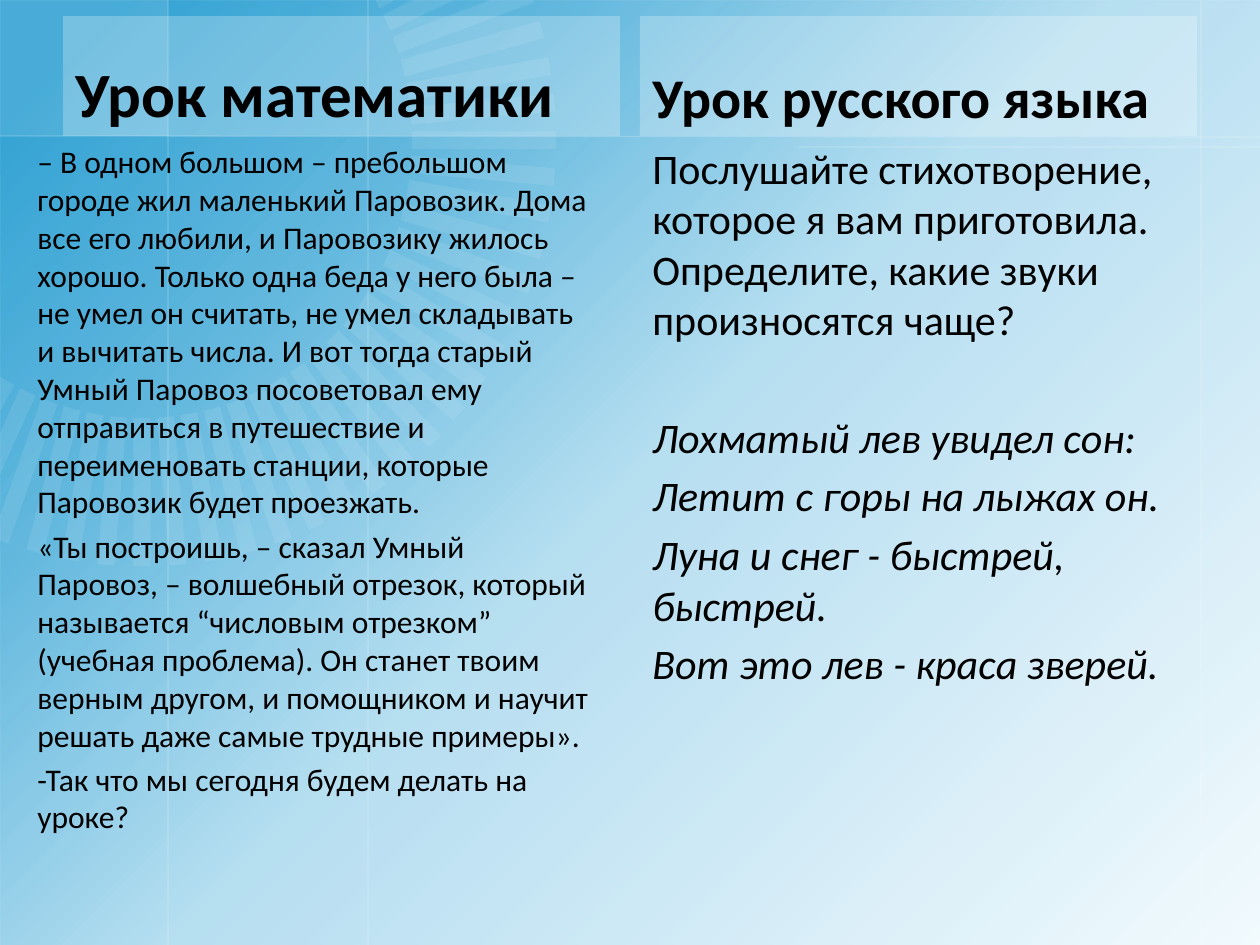
import math
from dataclasses import dataclass

from lxml import etree
from pptx import Presentation
from pptx import util as u
from pptx.dml.color import RGBColor
from pptx.enum import shapes, text
from pptx.oxml import parse_xml
from pptx.oxml.ns import nsdecls, qn

PX = 914400 / 126
WIDTH, HEIGHT = 1260, 945


@dataclass(frozen=True)
class Theme:
    font: str = "Calibri"
    ink: str = "000000"
    white: str = "FFFFFF"
    paper: str = "F4FBFE"
    blue: str = "0F92CC"
    ray: str = "F2FAFE"
    math_heading: int = 36
    russian_heading: int = 32
    math_body: int = 18
    russian_body: int = 24


THEME = Theme()

STORY = [
    "– В одном большом – пребольшом городе жил маленький Паровозик. Дома все его "
    "любили, и Паровозику жилось хорошо. Только одна беда у него была – не умел он "
    "считать, не умел складывать и вычитать числа. И вот тогда старый Умный Паровоз "
    "посоветовал ему отправиться в путешествие и переименовать станции, которые "
    "Паровозик будет проезжать.",
    "«Ты построишь, – сказал Умный Паровоз, – волшебный отрезок, который называется "
    "“числовым отрезком” (учебная проблема). Он станет твоим верным другом, и "
    "помощником и научит решать даже самые трудные примеры».",
    "-Так что мы сегодня будем делать на уроке?",
]
TASK = ("Послушайте стихотворение, которое я вам приготовила. "
        "Определите, какие звуки произносятся чаще?")
POEM = [
    "Лохматый лев увидел сон:",
    "Летит с горы на лыжах он.",
    "Луна и снег - быстрей, быстрей.",
    "Вот это лев - краса зверей.",
]


def emu(*lengths):
    return [u.Emu(round(length * PX)) for length in lengths]


def set_alpha(shape, percent):
    for color in shape.element.spPr.iter(qn("a:srgbClr")):
        etree.SubElement(color, qn("a:alpha"), val=str(percent * 1000))


def fill_clear(shape, color, percent):
    """Give a shape a see-through fill and no outline."""
    shape.fill.solid()
    shape.fill.fore_color.rgb = RGBColor.from_string(color)
    shape.line.fill.background()
    set_alpha(shape, percent)


def add_rectangle(page, *frame):
    box = page.shapes.add_shape(shapes.MSO_SHAPE.RECTANGLE, *emu(*frame))
    box.shadow.inherit = False
    box.line.fill.background()
    return box


def add_gradient(page, stops):
    box = add_rectangle(page, 0, 0, WIDTH, HEIGHT)
    box.fill.background()
    marks = "".join(
        f'<a:gs pos="{place * 1000}"><a:srgbClr val="{THEME.blue}">'
        f'<a:alpha val="{alpha * 1000}"/></a:srgbClr></a:gs>'
        for place, alpha in stops)
    gradient = parse_xml(
        f'<a:gradFill {nsdecls("a")} rotWithShape="1"><a:gsLst>{marks}</a:gsLst>'
        '<a:lin ang="2700000" scaled="0"/></a:gradFill>')
    properties = box.element.spPr
    properties.replace(properties.find(qn("a:noFill")), gradient)


def add_guide(page, *ends):
    guide = page.shapes.add_connector(shapes.MSO_CONNECTOR.STRAIGHT, *emu(*ends))
    guide.line.color.rgb = RGBColor.from_string(THEME.white)
    guide.line.width = u.Pt(0.75)
    set_alpha(guide, 20)
    etree.SubElement(guide.element.spPr, qn("a:effectLst"))


def clip(points, axis):
    """Cut off the part of a polygon that lies below zero on one axis."""
    kept = []
    for start, end in zip(points, points[1:] + points[:1]):
        if start[axis] >= 0:
            kept.append(start)
        if (start[axis] >= 0) != (end[axis] >= 0):
            share = start[axis] / (start[axis] - end[axis])
            kept.append(tuple(a + share * (b - a) for a, b in zip(start, end)))
    return kept


def add_ray(page, degrees):
    center_x, center_y, inner, outer, half, stretch = 142, 140, 270, 414, 8.5, 1.03
    cosine, sine = math.cos(math.radians(degrees)), math.sin(math.radians(degrees))
    corners = [(inner, -half), (outer, -half), (outer, half), (inner, half)]
    points = [(center_x + along * cosine - across * sine,
               center_y + (along * sine + across * cosine) * stretch)
              for along, across in corners]
    points = [emu(*point) for point in clip(clip(points, 0), 1)]
    builder = page.shapes.build_freeform(*points[0])
    builder.add_line_segments(points[1:], close=True)
    ray = builder.convert_to_shape()
    ray.shadow.inherit = False
    fill_clear(ray, THEME.ray, 10)


def add_backdrop(page):
    page.background.fill.solid()
    page.background.fill.fore_color.rgb = RGBColor.from_string(THEME.paper)
    add_gradient(page, [(6, 83), (26, 63), (50, 27), (100, 0)])
    fill_clear(add_rectangle(page, 0, 0, 168, 136), THEME.white, 10)
    for x in (168, 1201, 368):
        add_guide(page, x, 0, x, HEIGHT)
    add_guide(page, 0, 136, WIDTH, 137)
    add_guide(page, 798, 147, WIDTH, 147)
    for degrees in range(-30, 121, 5):
        add_ray(page, degrees)


def format_paragraph(para, size, bold=False, italic=False):
    para.alignment = text.PP_ALIGN.LEFT
    for span in para.runs:
        span.font.name = THEME.font
        span.font.size = u.Pt(size)
        span.font.bold = bold
        span.font.italic = italic
        span.font.color.rgb = RGBColor.from_string(THEME.ink)


def set_heading(box, left, wording, size):
    box.left, box.top, box.width, box.height = emu(left, 16, 557, 120)
    fill_clear(box, THEME.white, 25)
    frame = box.text_frame
    frame.text = wording
    frame.word_wrap = True
    frame.auto_size = text.MSO_AUTO_SIZE.NONE
    frame.vertical_anchor = text.MSO_ANCHOR.BOTTOM
    format_paragraph(frame.paragraphs[0], size, bold=True)


def add_body(page, left, width, lines, size, italic_from=None):
    """Add paragraphs; those from italic_from on are an italic block set apart."""
    frame = page.shapes.add_textbox(*emu(left, 136, width, 801)).text_frame
    frame.word_wrap = True
    frame.text = "\n".join(lines)
    for index, para in enumerate(frame.paragraphs):
        italic = italic_from is not None and index >= italic_from
        format_paragraph(para, size, italic=italic)
        if index:
            gap = size * (1.6 if index == italic_from else 0.2)
            para.space_before = u.Pt(round(gap, 1))


def main():
    deck = Presentation()
    deck.slide_width, deck.slide_height = emu(WIDTH, HEIGHT)
    page = deck.slides.add_slide(deck.slide_layouts[5])
    add_backdrop(page)

    title = page.shapes.title
    title.element.getparent().append(title.element)  # in front of the backdrop
    set_heading(title, 63, "Урок математики", THEME.math_heading)
    add_body(page, 25, 577, STORY, THEME.math_body)

    second_heading = page.shapes.add_textbox(0, 0, 0, 0)
    set_heading(second_heading, 640, "Урок русского языка", THEME.russian_heading)
    add_body(page, 640, 557, [TASK, *POEM], THEME.russian_body, italic_from=1)
    deck.save("out.pptx")


if __name__ == "__main__":
    main()
